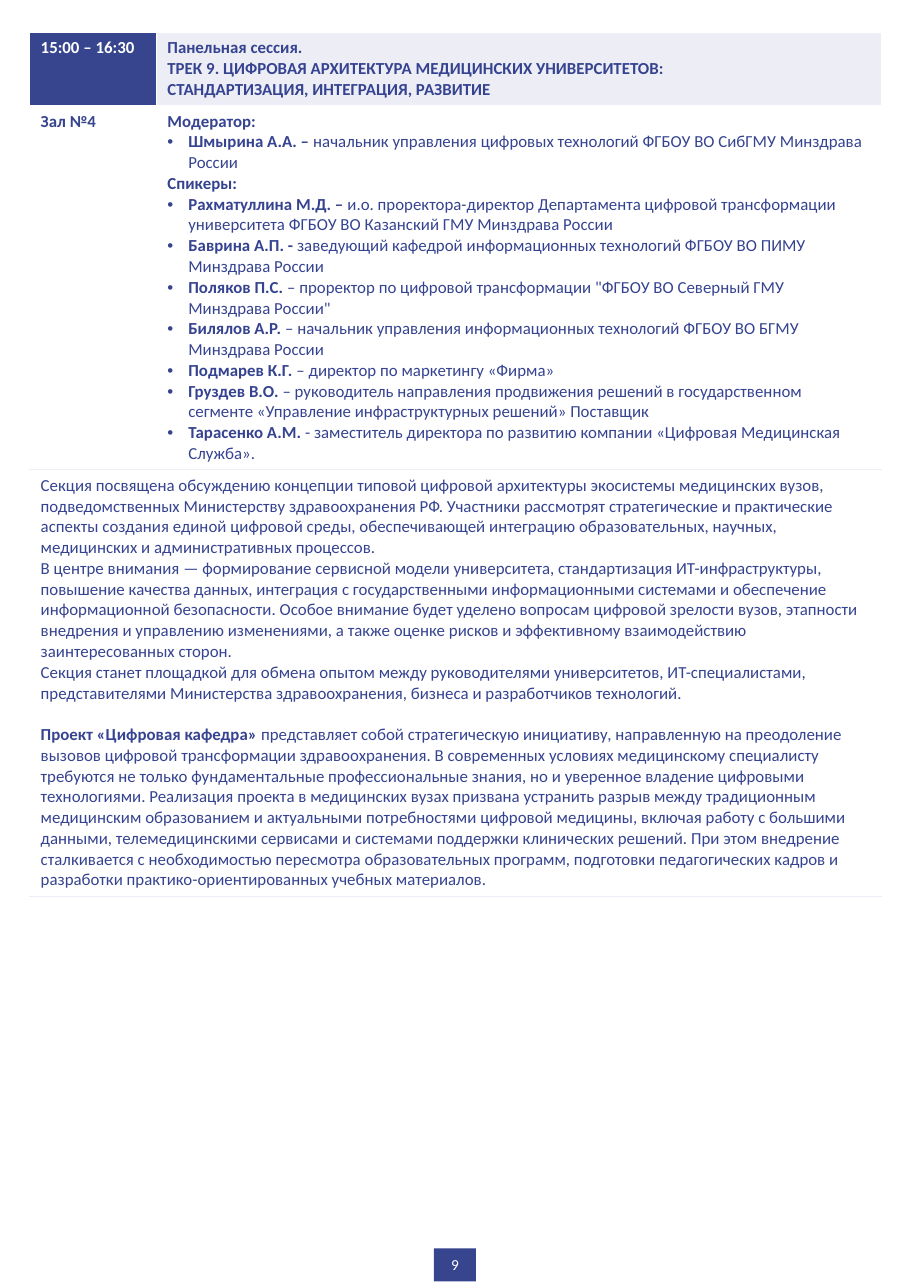
from dataclasses import dataclass

from lxml import etree
from pptx import Presentation, util as u
from pptx.dml.color import RGBColor
from pptx.enum import shapes, text
from pptx.oxml import ns

NAVY = RGBColor(0x36, 0x45, 0x8E)
INK = RGBColor(0x35, 0x43, 0x90)
MIST = RGBColor(0xED, 0xEE, 0xF5)
WHITE = RGBColor(0xFF, 0xFF, 0xFF)

PAGE_WIDTH, PAGE_HEIGHT = u.Inches(8.27), u.Inches(11.69)
HANGING = u.Inches(0.19)
# Shares of the page, in percent of its width or height
AGENDA_LEFT, AGENDA_TOP = 3.26, 2.48
AGENDA_COLUMNS = (13.91, 79.56)
AGENDA_ROWS = (5.65, 28.23, 33.11)


@dataclass(frozen=True)
class Line:
    lead: str = ""
    body: str = ""
    bullet: bool = False
    gap_before: float = 0


@dataclass(frozen=True)
class Entry:
    row: int
    column: int
    lines: tuple[Line, ...]
    fill: RGBColor = WHITE
    color: RGBColor = INK


def speaker(lead: str, body: str) -> Line:
    return Line(lead, body, bullet=True)


ENTRIES = (
    Entry(0, 0, (Line("15:00 – 16:30"),), NAVY, WHITE),
    Entry(0, 1, (
        Line("Панельная сессия."),
        Line("ТРЕК 9. ЦИФРОВАЯ АРХИТЕКТУРА МЕДИЦИНСКИХ УНИВЕРСИТЕТОВ:"),
        Line("СТАНДАРТИЗАЦИЯ, ИНТЕГРАЦИЯ, РАЗВИТИЕ"),
    ), MIST),
    Entry(1, 0, (Line("Зал №4"),), color=NAVY),
    Entry(1, 1, (
        Line("Модератор:"),
        speaker("Шмырина А.А. – ", "начальник управления цифровых технологий "
                "ФГБОУ ВО СибГМУ Минздрава России"),
        Line("Спикеры:"),
        speaker("Рахматуллина М.Д. – ", "и.о. проректора-директор Департамента цифровой "
                "трансформации университета ФГБОУ ВО Казанский ГМУ Минздрава России"),
        speaker("Баврина А.П. - ", "заведующий кафедрой информационных технологий "
                "ФГБОУ ВО ПИМУ Минздрава России"),
        speaker("Поляков П.С. ", "– проректор по цифровой трансформации "
                "\"ФГБОУ ВО Северный ГМУ Минздрава России\""),
        speaker("Билялов А.Р. ", "– начальник управления информационных технологий "
                "ФГБОУ ВО БГМУ Минздрава России"),
        speaker("Подмарев К.Г. ", "– директор по маркетингу «Фирма»"),
        speaker("Груздев В.О. ", "– руководитель направления продвижения решений в "
                "государственном сегменте «Управление инфраструктурных решений» Поставщик"),
        speaker("Тарасенко А.М. ", "- заместитель директора по развитию компании "
                "«Цифровая Медицинская Служба»."),
    )),
    Entry(2, 0, (
        Line(body="Секция посвящена обсуждению концепции типовой цифровой архитектуры "
             "экосистемы медицинских вузов, подведомственных Министерству здравоохранения РФ. "
             "Участники рассмотрят стратегические и практические аспекты создания единой "
             "цифровой среды, обеспечивающей интеграцию образовательных, научных, "
             "медицинских и административных процессов."),
        Line(body="В центре внимания — формирование сервисной модели университета, "
             "стандартизация ИТ-инфраструктуры, повышение качества данных, интеграция с "
             "государственными информационными системами и обеспечение информационной "
             "безопасности. Особое внимание будет уделено вопросам цифровой зрелости вузов, "
             "этапности внедрения и управлению изменениями, а также оценке рисков и "
             "эффективному взаимодействию заинтересованных сторон."),
        Line(body="Секция станет площадкой для обмена опытом между руководителями "
             "университетов, ИТ-специалистами, представителями Министерства "
             "здравоохранения, бизнеса и разработчиков технологий."),
        Line("Проект «Цифровая кафедра» ",
             "представляет собой стратегическую инициативу, направленную на преодоление "
             "вызовов цифровой трансформации здравоохранения. В современных условиях "
             "медицинскому специалисту требуются не только фундаментальные профессиональные "
             "знания, но и уверенное владение цифровыми технологиями. Реализация проекта в "
             "медицинских вузах призвана устранить разрыв между традиционным медицинским "
             "образованием и актуальными потребностями цифровой медицины, включая работу с "
             "большими данными, телемедицинскими сервисами и системами поддержки клинических "
             "решений. При этом внедрение сталкивается с необходимостью пересмотра "
             "образовательных программ, подготовки педагогических кадров и разработки "
             "практико-ориентированных учебных материалов.", gap_before=13.5),
    )),
)


def across(percent: float) -> int:
    return round(PAGE_WIDTH * percent / 100)


def down(percent: float) -> int:
    return round(PAGE_HEIGHT * percent / 100)


def write(paragraph, words: str, *, color: RGBColor, size: float = 11,
          bold: bool = False) -> None:
    run = paragraph.add_run()
    run.text = words
    run.font.name = "Calibri"
    run.font.size = u.Pt(size)
    run.font.bold = bold
    run.font.color.rgb = color


def add_bullet(paragraph) -> None:
    properties = paragraph._p.get_or_add_pPr()
    properties.set("marL", str(HANGING))
    properties.set("indent", str(-HANGING))
    etree.SubElement(properties, ns.qn("a:buFont")).set("typeface", "Arial")
    etree.SubElement(properties, ns.qn("a:buChar")).set("char", "•")


def rule_cell(cell, side: str, points: float) -> None:
    """Draw a pale border; call for the bottom before the top."""
    border = etree.Element(ns.qn(f"a:ln{side}"), w=str(u.Pt(points)))
    fill = etree.SubElement(border, ns.qn("a:solidFill"))
    etree.SubElement(fill, ns.qn("a:srgbClr")).set("val", str(MIST))
    cell._tc.get_or_add_tcPr().insert(0, border)


def fill_entry(cell, entry: Entry) -> None:
    cell.fill.solid()
    cell.fill.fore_color.rgb = entry.fill
    frame = cell.text_frame
    for index, line in enumerate(entry.lines):
        paragraph = frame.add_paragraph() if index else frame.paragraphs[0]
        if line.gap_before:
            paragraph.space_before = u.Pt(line.gap_before)
        if line.bullet:
            add_bullet(paragraph)
        if line.lead:
            write(paragraph, line.lead, color=entry.color, bold=True)
        if line.body:
            write(paragraph, line.body, color=entry.color)


def add_agenda(slide) -> None:
    agenda = slide.shapes.add_table(
        len(AGENDA_ROWS), len(AGENDA_COLUMNS), across(AGENDA_LEFT), down(AGENDA_TOP),
        across(sum(AGENDA_COLUMNS)), down(sum(AGENDA_ROWS))).table
    agenda.first_row = agenda.horz_banding = False
    for column, share in zip(agenda.columns, AGENDA_COLUMNS):
        column.width = across(share)
    for row, share in zip(agenda.rows, AGENDA_ROWS):
        row.height = down(share)
    agenda.cell(2, 0).merge(agenda.cell(2, 1))
    for entry in ENTRIES:
        fill_entry(agenda.cell(entry.row, entry.column), entry)
    for column in range(len(AGENDA_COLUMNS)):
        rule_cell(agenda.cell(1, column), "B", 1)
        rule_cell(agenda.cell(2, column), "B", 0.5)
        rule_cell(agenda.cell(2, column), "T", 1)


def add_page_number(slide) -> None:
    badge = slide.shapes.add_shape(shapes.MSO_SHAPE.RECTANGLE, across(47.64), down(96.92),
                                   across(4.6), down(2.57))
    badge.shadow.inherit = False
    badge.fill.solid()
    badge.fill.fore_color.rgb = NAVY
    badge.line.fill.background()
    badge.text_frame.vertical_anchor = text.MSO_ANCHOR.MIDDLE
    number = badge.text_frame.paragraphs[0]
    number.alignment = text.PP_ALIGN.CENTER
    write(number, "9", color=WHITE, size=10)


def main() -> None:
    program = Presentation()
    program.slide_width, program.slide_height = PAGE_WIDTH, PAGE_HEIGHT
    slide = program.slides.add_slide(program.slide_layouts[6])
    add_page_number(slide)
    add_agenda(slide)
    program.save("out.pptx")


if __name__ == "__main__":
    main()
